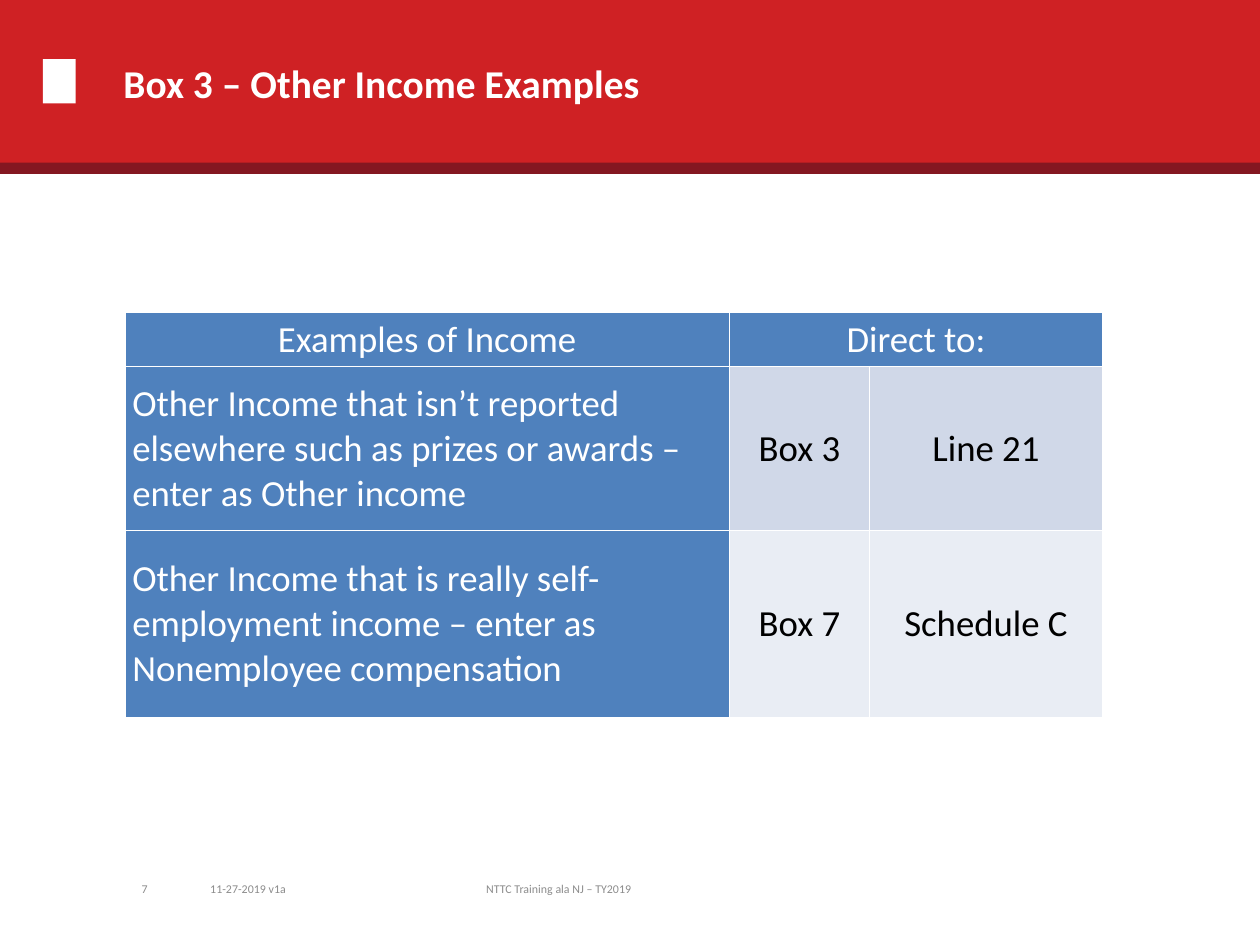
from lxml import etree
from pptx import Presentation
from pptx.dml.color import RGBColor
from pptx.enum import shapes, text
from pptx.oxml import ns
from pptx.util import Inches, Pt

# Content
TITLE = "Box 3 – Other Income Examples"
ROWS = [
    ("Examples of Income", "Direct to:", ""),
    ("Other Income that isn’t reported elsewhere such as prizes or awards – "
     "enter as Other income", "Box 3", "Line 21"),
    ("Other Income that is really self-employment income – enter as "
     "Nonemployee compensation", "Box 7", "Schedule C"),
]
LEFT, CENTER, RIGHT = text.PP_ALIGN.LEFT, text.PP_ALIGN.CENTER, text.PP_ALIGN.RIGHT
FOOTERS = [  # text, left, width, alignment
    ("7", 0.5, 0.77, RIGHT),
    ("11-27-2019 v1a", 1.57, 1.09, LEFT),
    ("NTTC Training ala NJ – TY2019", 2.85, 3.17, CENTER),
]

# Layout and colours
BANDS = [  # left, top, width, height, colour
    (0, -0.01, 10, 1.33, "CF2124"),
    (0.34, 0.47, 0.26, 0.35, "FFFFFF"),
    (0, 1.29, 10, 0.09, "841721"),
]
COLUMN_WIDTHS = [4.8, 1.11, 1.85]
ROW_HEIGHTS = [0.43, 1.3, 1.49]
HEADER_FILL, ROW_FILLS = "4F81BD", ["4F81BD", "D0D8E8", "E9EDF4"]
MIDDLE = text.MSO_ANCHOR.MIDDLE


def color(value):
    return RGBColor.from_string(value)


def set_fill(target, value):
    target.fill.solid()
    target.fill.fore_color.rgb = color(value)


def write(frame, content, size, ink, alignment=LEFT, bold=False):
    frame.word_wrap = True
    paragraph = frame.paragraphs[0]
    paragraph.alignment = alignment
    run = paragraph.add_run()
    run.text = content
    for name, value in {"name": "Calibri", "size": Pt(size), "bold": bold}.items():
        setattr(run.font, name, value)
    run.font.color.rgb = color(ink)


def set_borders(cell, value, width):
    properties = cell._tc.get_or_add_tcPr()
    for index, side in enumerate(("a:lnL", "a:lnR", "a:lnT", "a:lnB")):
        line = etree.Element(ns.qn(side), w=str(Pt(width)))
        fill = etree.SubElement(line, ns.qn("a:solidFill"))
        etree.SubElement(fill, ns.qn("a:srgbClr"), val=value)
        properties.insert(index, line)


presentation = Presentation()
presentation.slide_width, presentation.slide_height = Inches(10), Inches(7.5)
slide = presentation.slides.add_slide(presentation.slide_layouts[5])

# Header bands
for *box, fill in BANDS:
    band = slide.shapes.add_shape(shapes.MSO_SHAPE.RECTANGLE, *map(Inches, box))
    band.shadow.inherit = False
    band.line.fill.background()
    set_fill(band, fill)

# Title, brought in front of the bands
title = slide.shapes.title
title.left, title.top, title.width, title.height = map(Inches, (0.88, 0.03, 8, 1.25))
title.text_frame.vertical_anchor = MIDDLE
write(title.text_frame, TITLE, 22.5, "FFFFFF", bold=True)
title._element.getparent().append(title._element)

# Income table
frame = slide.shapes.add_table(
    len(ROWS), len(COLUMN_WIDTHS), Inches(0.99), Inches(2.48),
    Inches(sum(COLUMN_WIDTHS)), Inches(sum(ROW_HEIGHTS)))
table = frame.table
for column, width in zip(table.columns, COLUMN_WIDTHS):
    column.width = Inches(width)
for row, height in zip(table.rows, ROW_HEIGHTS):
    row.height = Inches(height)
table.cell(0, 1).merge(table.cell(0, 2))

CELL_FORMAT = {
    "vertical_anchor": MIDDLE,
    "margin_left": Inches(0.06), "margin_right": Inches(0.06),
    "margin_top": 0, "margin_bottom": 0,
}
for r, values in enumerate(ROWS):
    for c, content in enumerate(values):
        cell = table.cell(r, c)
        for name, value in CELL_FORMAT.items():
            setattr(cell, name, value)
        is_label = r == 0 or c == 0
        set_fill(cell, HEADER_FILL if is_label else ROW_FILLS[r])
        set_borders(cell, "FFFFFF", 1)
        if content:
            write(cell.text_frame, content, 21, "FFFFFF" if is_label else "000000",
                  LEFT if r and c == 0 else CENTER)

# Footer
for content, left, width, alignment in FOOTERS:
    box = slide.shapes.add_textbox(Inches(left), Inches(6.85), Inches(width), Inches(0.4))
    box.text_frame.vertical_anchor = MIDDLE
    write(box.text_frame, content, 6.8, "8C8C8C", alignment)

presentation.save("out.pptx")
